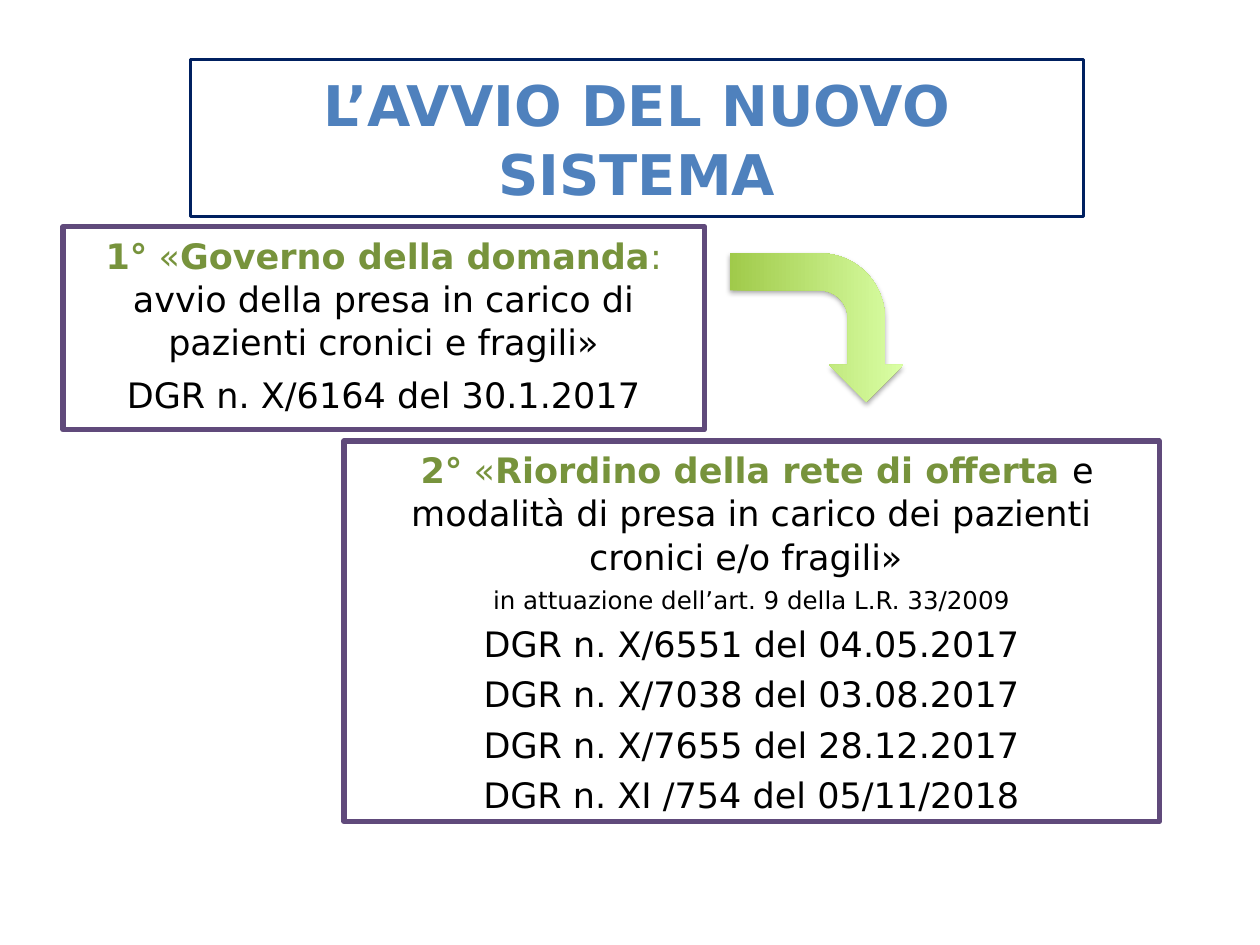
from lxml import etree
from pptx import Presentation
from pptx.dml.color import RGBColor
from pptx.enum.shapes import MSO_SHAPE
from pptx.enum.text import MSO_ANCHOR, MSO_AUTO_SIZE, PP_ALIGN
from pptx.oxml import parse_xml
from pptx.oxml.ns import nsdecls, qn
from pptx.util import Inches, Pt

FONT = "DejaVu Sans"
BLACK = RGBColor(0x00, 0x00, 0x00)
BLUE = RGBColor(0x4F, 0x81, 0xBD)
NAVY = RGBColor(0x00, 0x20, 0x60)
GREEN = RGBColor(0x77, 0x93, 0x3C)
PURPLE = RGBColor(0x60, 0x4A, 0x7B)
ARROW_DARK = RGBColor(0xA0, 0xCA, 0x4A)
ARROW_LIGHT = RGBColor(0xDA, 0xFF, 0xA5)
CENTER = PP_ALIGN.CENTER
TOP = MSO_ANCHOR.TOP
MIDDLE = MSO_ANCHOR.MIDDLE
NO_AUTOFIT = MSO_AUTO_SIZE.NONE
BENT_ARROW = MSO_SHAPE.BENT_ARROW

DEMAND = [
    (20, 0, [
        ("1°", GREEN, True),
        (" «", GREEN, False),
        ("Governo della domanda", GREEN, True),
        (": ", GREEN, False),
        ("avvio della presa in carico di pazienti cronici e fragili»", BLACK, False),
    ]),
    (20, 5.5, [("DGR n. X/6164 del 30.1.2017", BLACK, False)]),
]
RESOLUTIONS = [
    "DGR n. X/6551 del 04.05.2017",
    "DGR n. X/7038 del 03.08.2017",
    "DGR n. X/7655 del 28.12.2017",
    "DGR n. XI /754 del 05/11/2018",
]
SUPPLY = [
    (20, 0, [
        (" ", BLACK, False),
        ("2°", GREEN, True),
        (" «", GREEN, False),
        ("Riordino della rete di offerta ", GREEN, True),
        ("e modalità di presa in carico dei pazienti cronici e/o fragili» ", BLACK, False),
    ]),
    (14, 4, [("in attuazione dell’art. 9 della L.R. 33/2009", BLACK, False)]),
] + [(20, 4, [(resolution, BLACK, False)]) for resolution in RESOLUTIONS]


def fill_paragraph(paragraph, size, space_before, runs):
    """Write centred, unbulleted runs of (text, colour, bold)."""
    properties = paragraph._p.get_or_add_pPr()
    properties.set("marL", "0")
    properties.set("indent", "0")
    etree.SubElement(properties, qn("a:buNone"))
    paragraph.alignment = CENTER
    paragraph.line_spacing = 1.03
    paragraph.space_before = Pt(space_before)
    for text, color, bold in runs:
        run = paragraph.add_run()
        run.text = text
        run.font.name = FONT
        run.font.size = Pt(size)
        run.font.bold = bold
        run.font.color.rgb = color


def fill_box(shape, bounds, line_color, line_width, anchor, paragraphs):
    """Place and outline a placeholder, then write its paragraphs."""
    shape.left, shape.top, shape.width, shape.height = map(Inches, bounds)
    shape.line.color.rgb = line_color
    shape.line.width = Pt(line_width)
    frame = shape.text_frame
    frame.word_wrap = True
    frame.auto_size = NO_AUTOFIT
    frame.vertical_anchor = anchor
    for index, content in enumerate(paragraphs):
        paragraph = frame.add_paragraph() if index else frame.paragraphs[0]
        fill_paragraph(paragraph, *content)


def add_bent_arrow(slide, bounds):
    """Add the turned gradient arrow with its soft shadow."""
    arrow = slide.shapes.add_shape(BENT_ARROW, *map(Inches, bounds))
    arrow.rotation = 90
    arrow.line.fill.background()
    arrow.fill.gradient()
    arrow.fill.gradient_angle = 90
    for stop, color in zip(arrow.fill.gradient_stops, (ARROW_DARK, ARROW_LIGHT)):
        stop.color.rgb = color
    arrow.shadow.inherit = False
    shadow = parse_xml(
        f'<a:outerShdw {nsdecls("a")} blurRad="{Pt(3.1)}" dist="{Pt(1.8)}" '
        'dir="5400000" rotWithShape="0"><a:srgbClr val="000000">'
        '<a:alpha val="35000"/></a:srgbClr></a:outerShdw>'
    )
    arrow._element.spPr.find(qn("a:effectLst")).append(shadow)


def main():
    """Build and save the slide."""
    presentation = Presentation()
    presentation.slide_width = Inches(10)
    presentation.slide_height = Inches(7.5)
    slide = presentation.slides.add_slide(presentation.slide_layouts[3])
    title, demand, supply = list(slide.placeholders)[:3]
    heading = [(32, 0, [("L’AVVIO DEL NUOVO SISTEMA", BLUE, True)])]
    fill_box(title, (1.51, 0.47, 7.09, 1.25), NAVY, 1.5, MIDDLE, heading)
    fill_box(demand, (0.5, 1.8, 5.09, 1.61), PURPLE, 3, TOP, DEMAND)
    fill_box(supply, (2.73, 3.5, 6.47, 3.02), PURPLE, 3, TOP, SUPPLY)
    add_bent_arrow(slide, (5.89, 1.91, 1.18, 1.38))
    presentation.save("out.pptx")


if __name__ == "__main__":
    main()
